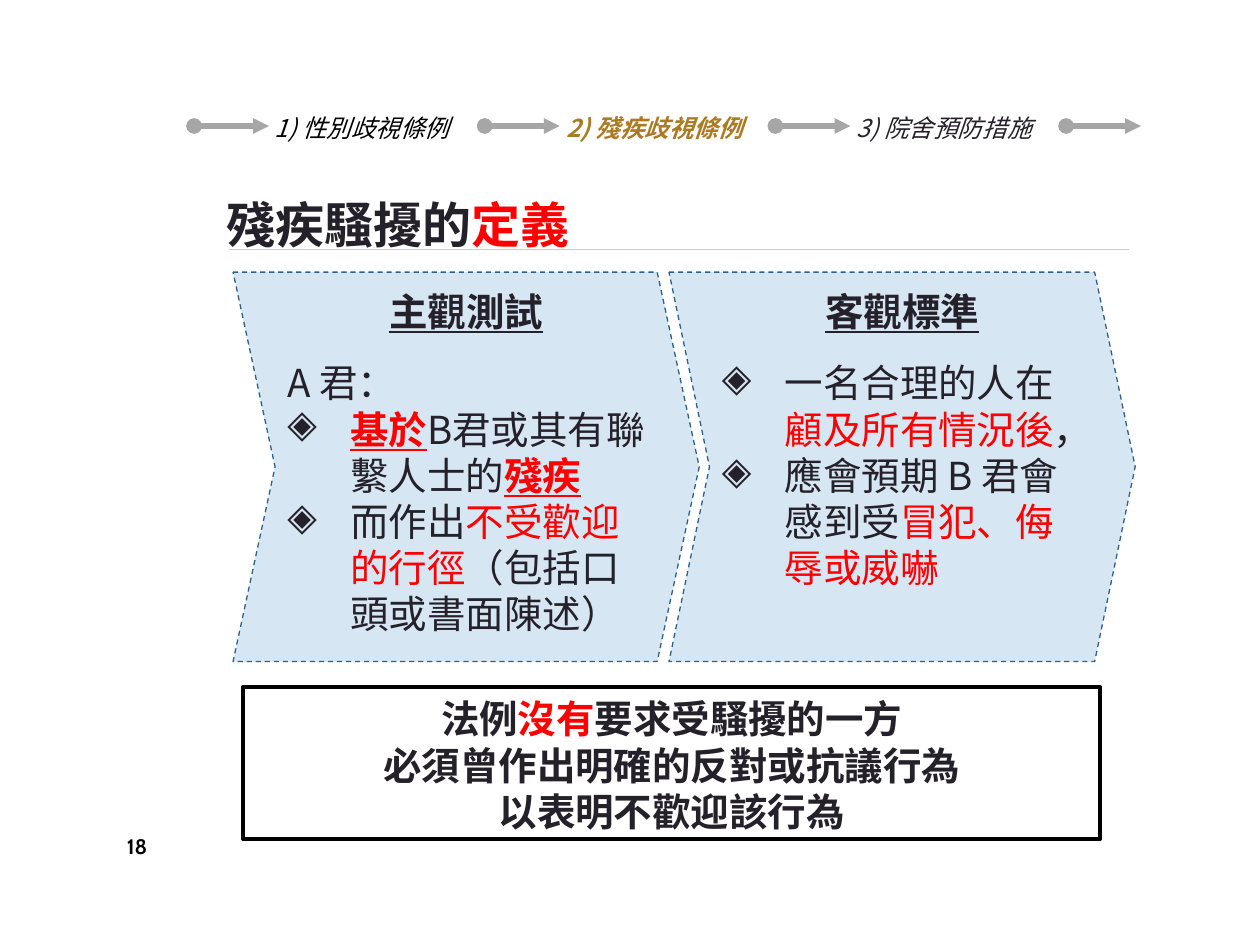
from lxml.etree import SubElement
from pptx import Presentation
from pptx.dml.color import RGBColor
from pptx.enum.dml import MSO_LINE
from pptx.enum.shapes import MSO_CONNECTOR, MSO_SHAPE
from pptx.enum.text import MSO_ANCHOR, PP_ALIGN
from pptx.oxml.ns import qn
from pptx.util import Pt

INK = RGBColor(0x25, 0x21, 0x2A)
BLACK = RGBColor(0, 0, 0)
RED = RGBColor(0xFF, 0, 0)
GOLD = RGBColor(0xAB, 0x7A, 0x22)
GREY = RGBColor(0xA6, 0xA6, 0xA6)
RULE = RGBColor(0xCC, 0xCC, 0xCC)
PALE_BLUE = RGBColor(0xD6, 0xE6, 0xF2)
BLUE = RGBColor(0x2B, 0x61, 0x8B)
CJK_FONT = "Noto Sans CJK SC"

# Runs are (text, format) pairs; a paragraph is a list of runs.
PLAIN, HOT = {}, {"color": RED}
KEY = {"color": RED, "bold": True, "underline": True}
HEADING = {"bold": True, "underline": True}

# text, left, width, format
STEPS = [
    ("1) 性別歧視條例", 144.7, 124.6, {"color": BLACK}),
    ("2) 殘疾歧視條例", 308.9, 130.3, {"color": GOLD, "bold": True}),
    ("3) 院舍預防措施", 481.7, 115.9, {}),
]
TITLE = [[("殘疾騷擾的", PLAIN), ("定義", HOT)]]
# heading, introduction, bullets, chevron adjustment
TESTS = [
    ("主觀測試", "A 君：", [
        [("基於", KEY), ("B君或其有聯繫人士的", PLAIN), ("殘疾", KEY), (" ", PLAIN)],
        [("而作出", PLAIN), ("不受歡迎的行徑", HOT), ("（包括口頭或書面陳述）", PLAIN)],
    ], 0.108),
    ("客觀標準", None, [
        [("一名合理的人在", PLAIN), ("顧及所有情況後", HOT), ("，", PLAIN)],
        [("應會預期 B 君會感到受", PLAIN), ("冒犯、侮辱或威嚇", HOT)],
    ], 0.104),
]
CONCLUSION = [
    [("法例", PLAIN), ("沒有", HOT), ("要求受騷擾的一方", PLAIN)],
    [("必須曾作出明確的反對或抗議行為", PLAIN)],
    [("以表明不歡迎該行為", PLAIN)],
]


def add_para(frame, runs, size, leading, align=PP_ALIGN.LEFT, before=0,
             indent=0, bullet=None, font=CJK_FONT, **base):
    """Fill the empty first paragraph, or append another one."""
    para = frame.paragraphs[0]
    if para.runs:
        para = frame.add_paragraph()
    para.alignment = align
    para.line_spacing = Pt(leading)
    if before:
        para.space_before = Pt(before)
    properties = para._p.get_or_add_pPr()
    if indent:
        properties.set("marL", str(Pt(indent)))
        properties.set("indent", str(-Pt(indent)))
    if bullet:
        colour = SubElement(properties, qn("a:buClr"))
        SubElement(colour, qn("a:srgbClr"), val=str(INK))
        SubElement(properties, qn("a:buChar"), char=bullet)
    for text, own in runs:
        look = {"color": INK, **base, **own}
        span = para.add_run()
        span.text = text
        span.font.name = font
        span.font.size = Pt(size)
        span.font.bold = look.get("bold", False)
        span.font.italic = look.get("italic", False)
        span.font.underline = look.get("underline", False)
        span.font.color.rgb = look["color"]
        SubElement(span._r.get_or_add_rPr(), qn("a:ea"), typeface=font)


def set_frame(box, anchor, side=7.2, top=7.2, bottom=7.2):
    frame = box.text_frame
    frame.word_wrap = True
    frame.vertical_anchor = anchor
    frame.margin_left = frame.margin_right = Pt(side)
    frame.margin_top, frame.margin_bottom = Pt(top), Pt(bottom)
    return frame


def add_text(page, place, paras, anchor=MSO_ANCHOR.MIDDLE, bottom=7.2, **look):
    box = page.shapes.add_textbox(*map(Pt, place))
    frame = set_frame(box, anchor, bottom=bottom)
    for runs in paras:
        add_para(frame, runs, **look)


def add_box(page, kind, place, line_color, weight):
    box = page.shapes.add_shape(kind, *map(Pt, place))
    box.shadow.inherit = False
    box.fill.background()
    box.line.color.rgb = line_color
    box.line.width = Pt(weight)
    return box


def add_line(page, left, right, y, color, weight, arrow=False):
    line = page.shapes.add_connector(
        MSO_CONNECTOR.STRAIGHT, Pt(left), Pt(y), Pt(right), Pt(y))
    line.line.color.rgb = color
    line.line.width = Pt(weight)
    if arrow:
        stroke = line.line._get_or_add_ln()
        SubElement(stroke, qn("a:headEnd"), type="oval")
        SubElement(stroke, qn("a:tailEnd"), type="triangle")
    SubElement(line._element.spPr, qn("a:effectLst"))


def add_test(page, left, heading, introduction, bullets, adjustment):
    chevron = add_box(page, MSO_SHAPE.CHEVRON, (left, 155.5, 266.4, 222.5), BLUE, 0.75)
    chevron.adjustments[0] = adjustment
    chevron.fill.solid()
    chevron.fill.fore_color.rgb = PALE_BLUE
    chevron.line.dash_style = MSO_LINE.DASH
    frame = set_frame(chevron, MSO_ANCHOR.TOP, top=9)
    body = {"size": 22, "leading": 26.4, "indent": 36}
    add_para(frame, [(heading, HEADING)], align=PP_ALIGN.CENTER, **body)
    gap = 14.5
    if introduction:
        add_para(frame, [(introduction, PLAIN)], before=gap, **body)
        gap = 0
    for runs in bullets:
        add_para(frame, runs, before=gap, bullet="◈", **body)
        gap = 0


def main():
    deck = Presentation()
    deck.slide_width, deck.slide_height = Pt(720), Pt(540)
    page = deck.slides.add_slide(deck.slide_layouts[6])

    add_line(page, 131, 645, 142.5, RULE, 0.75)
    add_text(page, (65.5, 463, 43.2, 41), [[("18", PLAIN)]], size=12, leading=14.5,
             font="Cabin", color=BLACK, bold=True)
    add_text(page, (122.4, 75.6, 521.3, 73.4), TITLE, anchor=MSO_ANCHOR.BOTTOM,
             bottom=4, size=28, leading=34, bold=True)

    for index, test in enumerate(TESTS):
        add_test(page, 133.2 + index * 249.1, *test)

    for index in range(len(STEPS) + 1):
        left = 110.9 + index * 166.1
        add_line(page, left, left + 42.8, 72, GREY, 3, arrow=True)
    for text, left, width, look in STEPS:
        add_text(page, (left, 60.5, width, 24.5), [[(text, look)]], size=14,
                 leading=17, align=PP_ALIGN.CENTER, italic=True)

    box = add_box(page, MSO_SHAPE.RECTANGLE, (139, 392.4, 489.6, 87.1), BLACK, 2.25)
    frame = set_frame(box, MSO_ANCHOR.TOP, top=5, bottom=2)
    for runs in CONCLUSION:
        add_para(frame, runs, 22, 26.4, align=PP_ALIGN.CENTER, bold=True)

    deck.save("out.pptx")


if __name__ == "__main__":
    main()
